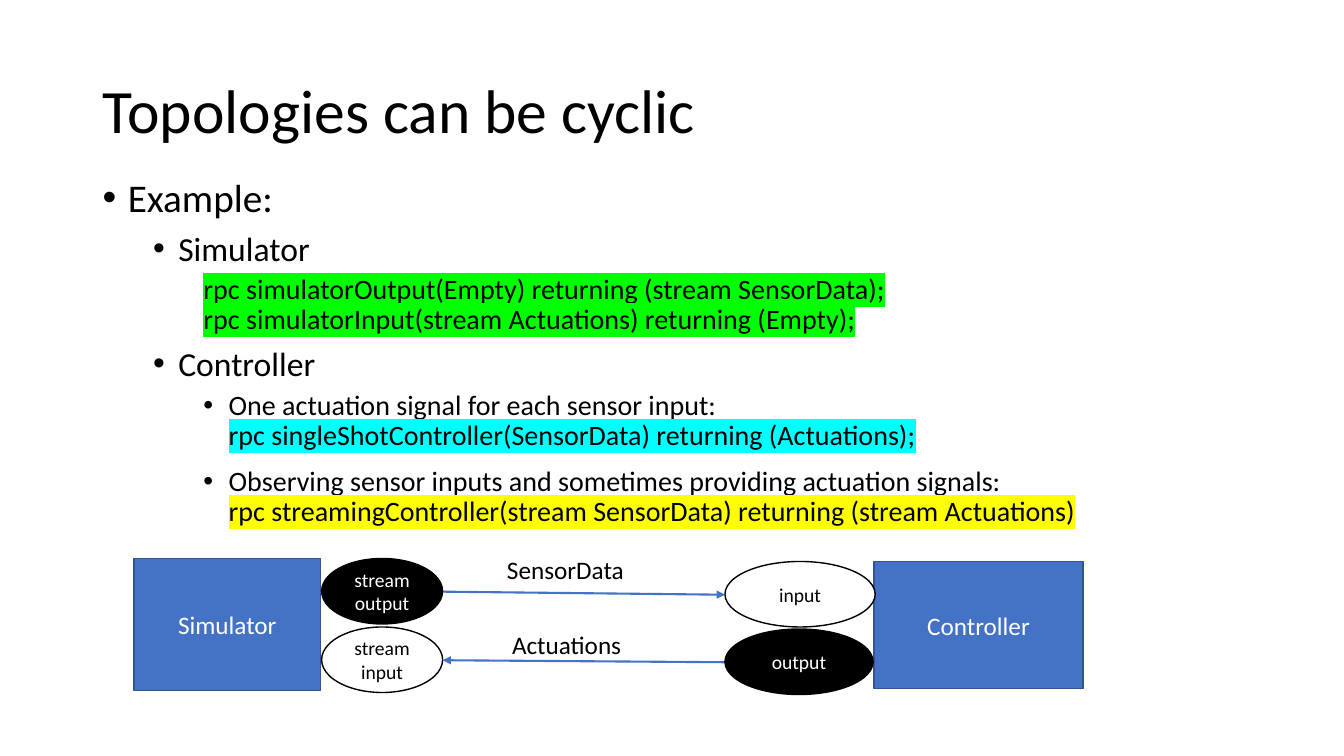
from dataclasses import dataclass

from lxml import etree
from pptx import Presentation
from pptx.dml.color import RGBColor
from pptx.enum.shapes import MSO_CONNECTOR, MSO_SHAPE
from pptx.enum.text import MSO_ANCHOR, MSO_AUTO_SIZE, PP_ALIGN
from pptx.oxml.ns import qn
from pptx.util import Emu, Pt

PX = 9144  # one hundredth of an inch
RECTANGLE, ELLIPSE = MSO_SHAPE.RECTANGLE, MSO_SHAPE.OVAL
STRAIGHT = MSO_CONNECTOR.STRAIGHT
LEFT, CENTER = PP_ALIGN.LEFT, PP_ALIGN.CENTER
TOP, MIDDLE = MSO_ANCHOR.TOP, MSO_ANCHOR.MIDDLE
TITLE_ONLY = 5


@dataclass(frozen=True)
class Theme:
    font: str = "Calibri"
    black: str = "000000"
    white: str = "FFFFFF"
    blue: str = "4472C4"
    blue_edge: str = "325491"
    green: str = "00FF00"
    cyan: str = "00FFFF"
    yellow: str = "FFFF00"
    title: int = 44
    topic: int = 28
    service: int = 24
    detail: int = 20
    label: int = 18
    port: int = 14
    edge: float = 1
    arrow: float = 1.5


THEME = Theme()


def px(*lengths):
    return [Emu(length * PX) for length in lengths]


def apply(target, values):
    for name, value in values.items():
        setattr(target, name, value)


class SlideBuilder:
    def __init__(self, slide, theme):
        self.slide = slide
        self.theme = theme

    def run(self, paragraph, text, size, color, highlight=None):
        run = paragraph.add_run()
        apply(run, {"text": text})
        apply(run.font, {"name": self.theme.font, "size": Pt(size)})
        run.font.color.rgb = RGBColor.from_string(color)
        if highlight:
            marker = etree.Element(qn("a:highlight"))
            etree.SubElement(marker, qn("a:srgbClr"), val=highlight)
            run._r.rPr.find(qn("a:latin")).addprevious(marker)

    def title(self, text, box):
        title = self.slide.shapes.title
        apply(title, dict(zip(("left", "top", "width", "height"), px(*box))))
        apply(title.text_frame, {"vertical_anchor": MIDDLE, "word_wrap": True,
                                 "auto_size": MSO_AUTO_SIZE.NONE})
        paragraph = title.text_frame.paragraphs[0]
        apply(paragraph, {"alignment": LEFT, "line_spacing": 0.9})
        self.run(paragraph, text, self.theme.title, self.theme.black)

    def outline(self, items, box):
        """Each item is (level, size, lines, format); a line is (text, highlight)."""
        frame = self.slide.shapes.add_textbox(*px(*box)).text_frame
        apply(frame, {"word_wrap": True, "vertical_anchor": TOP})
        for index, (level, size, lines, style) in enumerate(items):
            paragraph = frame.add_paragraph() if index else frame.paragraphs[0]
            apply(paragraph, {"level": level, "space_before": Pt(5), **style})
            for number, (text, highlight) in enumerate(lines):
                if number:
                    paragraph.add_line_break()
                self.run(paragraph, text, size, self.theme.black, highlight)
            self.bullet(paragraph, level, size != self.theme.detail or lines[0][1] is None)

    def bullet(self, paragraph, level, visible):
        properties = paragraph._p.get_or_add_pPr()
        margin, hanging = px(25 + 50 * level if visible else 50 * level, -25 if visible else 0)
        properties.set("marL", str(margin))
        properties.set("indent", str(hanging))
        if visible:
            etree.SubElement(properties, qn("a:buFont"), typeface="Arial")
            etree.SubElement(properties, qn("a:buChar"), char="•")

    def label(self, text, box):
        frame = self.slide.shapes.add_textbox(*px(*box)).text_frame
        apply(frame, {"word_wrap": True, "auto_size": MSO_AUTO_SIZE.SHAPE_TO_FIT_TEXT})
        self.run(frame.paragraphs[0], text, self.theme.label, self.theme.black)

    def node(self, kind, lines, box, fill, edge, color, size):
        shape = self.slide.shapes.add_shape(kind, *px(*box))
        shape.shadow.inherit = False
        shape.fill.solid()
        shape.fill.fore_color.rgb = RGBColor.from_string(fill)
        shape.line.color.rgb = RGBColor.from_string(edge)
        shape.line.width = Pt(self.theme.edge)
        frame = shape.text_frame
        apply(frame, {"word_wrap": True, "vertical_anchor": MIDDLE})
        for index, text in enumerate(lines):
            paragraph = frame.add_paragraph() if index else frame.paragraphs[0]
            paragraph.alignment = CENTER
            self.run(paragraph, text, size, color)

    def component(self, name, box):
        theme = self.theme
        self.node(RECTANGLE, [name], box, theme.blue, theme.blue_edge, theme.white, theme.label)

    def port(self, lines, box, is_output):
        theme = self.theme
        fill, color = (theme.black, theme.white) if is_output else (theme.white, theme.black)
        self.node(ELLIPSE, lines, box, fill, theme.black, color, theme.port)

    def arrow(self, start, end):
        connector = self.slide.shapes.add_connector(STRAIGHT, *px(*start, *end))
        connector.line.color.rgb = RGBColor.from_string(self.theme.blue)
        connector.line.width = Pt(self.theme.arrow)
        etree.SubElement(connector.line._get_or_add_ln(), qn("a:tailEnd"), type="triangle")
        etree.SubElement(connector._element.spPr, qn("a:effectLst"))


def main():
    presentation = Presentation()
    apply(presentation, dict(zip(("slide_width", "slide_height"), px(1333, 750))))
    slide = presentation.slides.add_slide(presentation.slide_layouts[TITLE_ONLY])
    builder = SlideBuilder(slide, THEME)

    builder.title("Topologies can be cyclic", (92, 40, 1150, 145))
    tight = {"line_spacing": 0.9}
    builder.outline([
        (0, THEME.topic, [("Example:", None)], {**tight, "space_before": Pt(10)}),
        (1, THEME.service, [("Simulator", None)], {}),
        (2, THEME.detail, [
            ("rpc simulatorOutput(Empty) returning (stream SensorData);", THEME.green),
            ("rpc simulatorInput(stream Actuations) returning (Empty);", THEME.green),
        ], tight),
        (1, THEME.service, [("Controller", None)], {}),
        (2, THEME.detail, [
            ("One actuation signal for each sensor input:", None),
            ("rpc singleShotController(SensorData) returning (Actuations);", THEME.cyan),
        ], {**tight, "space_before": Pt(6), "space_after": Pt(6)}),
        (2, THEME.detail, [
            ("Observing sensor inputs and sometimes providing actuation signals:", None),
            ("rpc streamingController(stream SensorData) returning (stream Actuations)",
             THEME.yellow),
        ], tight),
    ], (92, 172, 1150, 403))

    builder.arrow((439, 587), (719, 590))
    builder.arrow((719, 657), (439, 655))
    builder.label("Actuations", (498, 619, 135, 40))
    builder.label("SensorData", (493, 545, 149, 40))
    builder.component("Simulator", (133, 554, 185, 131))
    builder.port(["stream", "input"], (319, 622, 120, 65), is_output=False)
    builder.port(["stream", "output"], (319, 554, 120, 65), is_output=True)
    builder.component("Controller", (867, 557, 207, 126))
    builder.port(["input"], (719, 557, 149, 65), is_output=False)
    builder.port(["output"], (719, 624, 147, 65), is_output=True)
    presentation.save("out.pptx")


if __name__ == "__main__":
    main()
